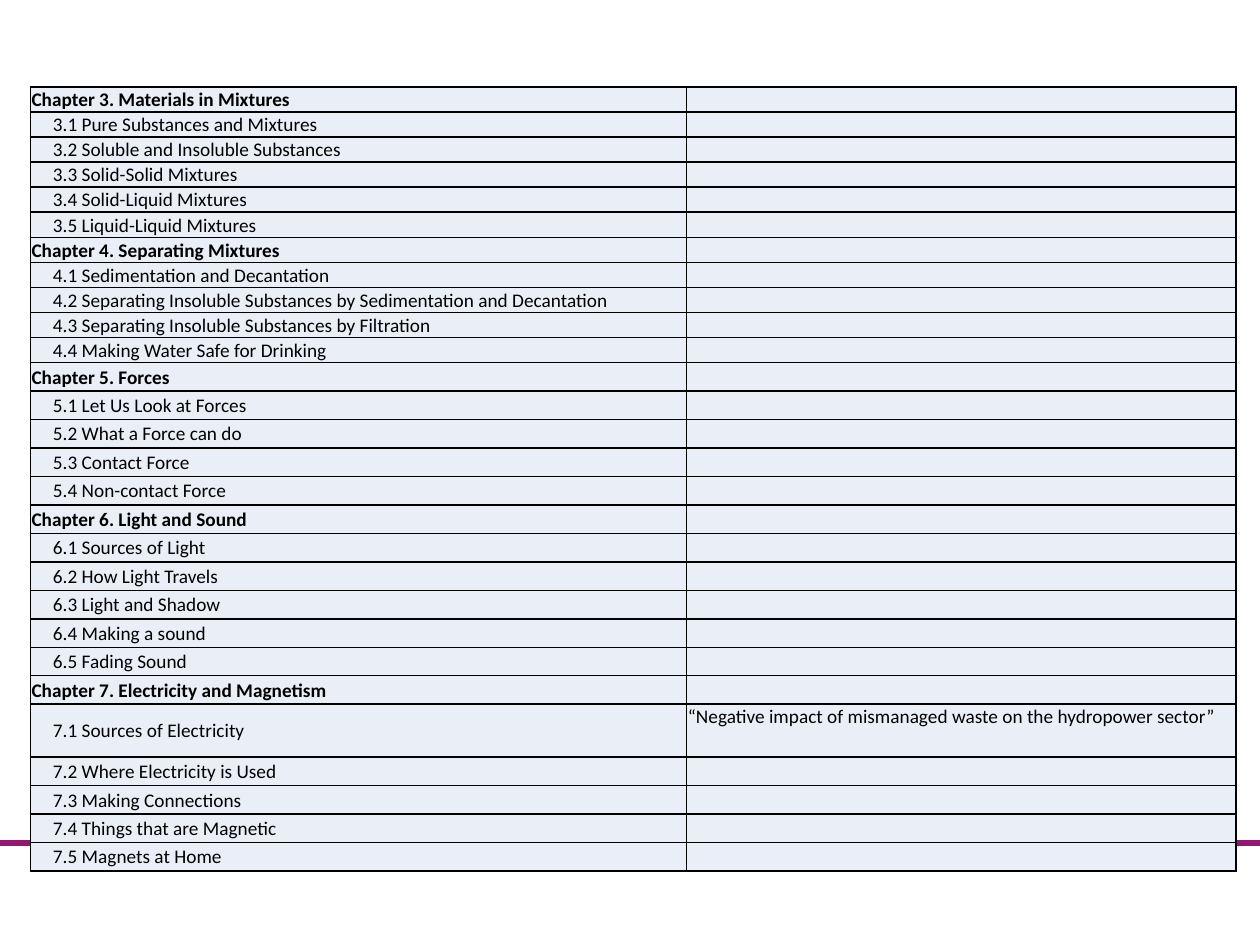
from lxml import etree
from pptx import Presentation
from pptx.dml.color import RGBColor
from pptx.enum import shapes, text
from pptx.oxml.ns import qn
from pptx.util import Emu, Inches, Pt

# Content: chapter, then its sections
CHAPTERS = [
    ("Chapter 3. Materials in Mixtures", [
        "3.1 Pure Substances and Mixtures",
        "3.2 Soluble and Insoluble Substances",
        "3.3 Solid-Solid Mixtures",
        "3.4 Solid-Liquid Mixtures",
        "3.5 Liquid-Liquid Mixtures"]),
    ("Chapter 4. Separating Mixtures", [
        "4.1 Sedimentation and Decantation",
        "4.2 Separating Insoluble Substances by Sedimentation and Decantation",
        "4.3 Separating Insoluble Substances by Filtration",
        "4.4 Making Water Safe for Drinking"]),
    ("Chapter 5. Forces", [
        "5.1 Let Us Look at Forces",
        "5.2 What a Force can do",
        "5.3 Contact Force",
        "5.4 Non-contact Force"]),
    ("Chapter 6. Light and Sound", [
        "6.1 Sources of Light",
        "6.2 How Light Travels",
        "6.3 Light and Shadow",
        "6.4 Making a sound",
        "6.5 Fading Sound"]),
    ("Chapter 7. Electricity and Magnetism", [
        "7.1 Sources of Electricity",
        "7.2 Where Electricity is Used",
        "7.3 Making Connections",
        "7.4 Things that are Magnetic",
        "7.5 Magnets at Home"]),
]
NOTES = {"7.1 Sources of Electricity":
         "“Negative impact of mismanaged waste on the hydropower sector”"}

FONT, SIZE = "Calibri", 11
INK, CELL_FILL, RULE = "000000", "EAEFF7", "93166F"
LEFT, TOP = 0.24, 0.69
COLUMNS = [5.21, 4.36]
COMPACT_CHAPTERS = 2           # these chapters have tighter rows
COMPACT_BOTTOM, BOTTOM = 2.83, 6.87
NOTE_HEIGHT = 0.42
INDENT = 0.17


def rgb(value):
    return RGBColor.from_string(value)


def add_borders(cell):
    properties = cell._tc.get_or_add_tcPr()
    for index, side in enumerate(("lnL", "lnR", "lnT", "lnB")):
        border = etree.Element(qn("a:" + side), w=str(Pt(1)))
        fill = etree.SubElement(border, qn("a:solidFill"))
        etree.SubElement(fill, qn("a:srgbClr"), val=INK)
        properties.insert(index, border)


def fill_cell(cell, words, bold=False, indent=0, anchor=text.MSO_ANCHOR.MIDDLE):
    cell.fill.solid()
    cell.fill.fore_color.rgb = rgb(CELL_FILL)
    add_borders(cell)
    cell.margin_left = cell.margin_right = cell.margin_top = Inches(0.01)
    cell.margin_bottom = 0
    cell.vertical_anchor = anchor
    paragraph = cell.text_frame.paragraphs[0]
    paragraph.text = words
    if indent:
        paragraph._p.get_or_add_pPr().set("marL", str(Inches(indent)))
    for run in paragraph.runs:
        run.font.name, run.font.size, run.font.bold = FONT, Pt(SIZE), bold
        run.font.color.rgb = rgb(INK)
    if not words:  # keeps an empty cell from stretching its row
        etree.SubElement(paragraph._p, qn("a:endParaRPr"), sz=str(SIZE * 100))


prs = Presentation()
prs.slide_width, prs.slide_height = Inches(10), Inches(7.5)
slide = prs.slides.add_slide(prs.slide_layouts[6])

# Rule across the foot
rule = slide.shapes.add_connector(shapes.MSO_CONNECTOR.STRAIGHT, 0, Inches(6.69),
                                  prs.slide_width, Inches(6.69))
rule.line.color.rgb = rgb(RULE)
rule.line.width = Pt(3)
etree.SubElement(rule._element.spPr, qn("a:effectLst"))

# Rows and their heights
rows = [(number, words, words == chapter)
        for number, (chapter, sections) in enumerate(CHAPTERS)
        for words in [chapter, *sections]]
compact_count = sum(number < COMPACT_CHAPTERS for number, _, _ in rows)
compact_height = (COMPACT_BOTTOM - TOP) / compact_count
open_height = ((BOTTOM - COMPACT_BOTTOM - NOTE_HEIGHT * len(NOTES))
               / (len(rows) - compact_count - len(NOTES)))

# Table of chapters and notes
frame = slide.shapes.add_table(len(rows), 2, Inches(LEFT), Inches(TOP),
                               Inches(sum(COLUMNS)), Inches(BOTTOM - TOP))
table = frame.table
table.first_row = table.horz_banding = False
for column, width in zip(table.columns, COLUMNS):
    column.width = Inches(width)
for row, (number, words, is_chapter) in zip(table.rows, rows):
    if words in NOTES:
        height = NOTE_HEIGHT
    else:
        height = compact_height if number < COMPACT_CHAPTERS else open_height
    row.height = Emu(Inches(height))
    topic, note = row.cells
    fill_cell(topic, words, bold=is_chapter, indent=0 if is_chapter else INDENT)
    fill_cell(note, NOTES.get(words, ""), anchor=text.MSO_ANCHOR.TOP)

prs.save("out.pptx")
